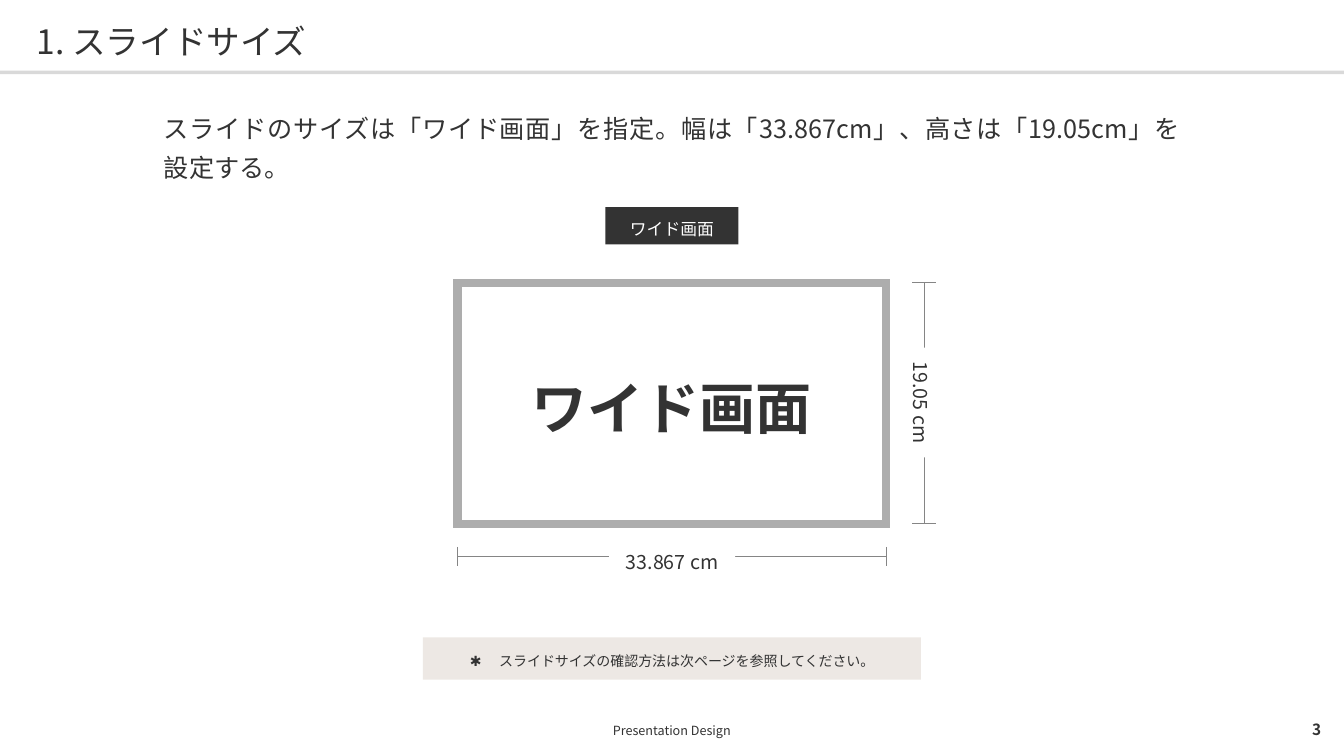
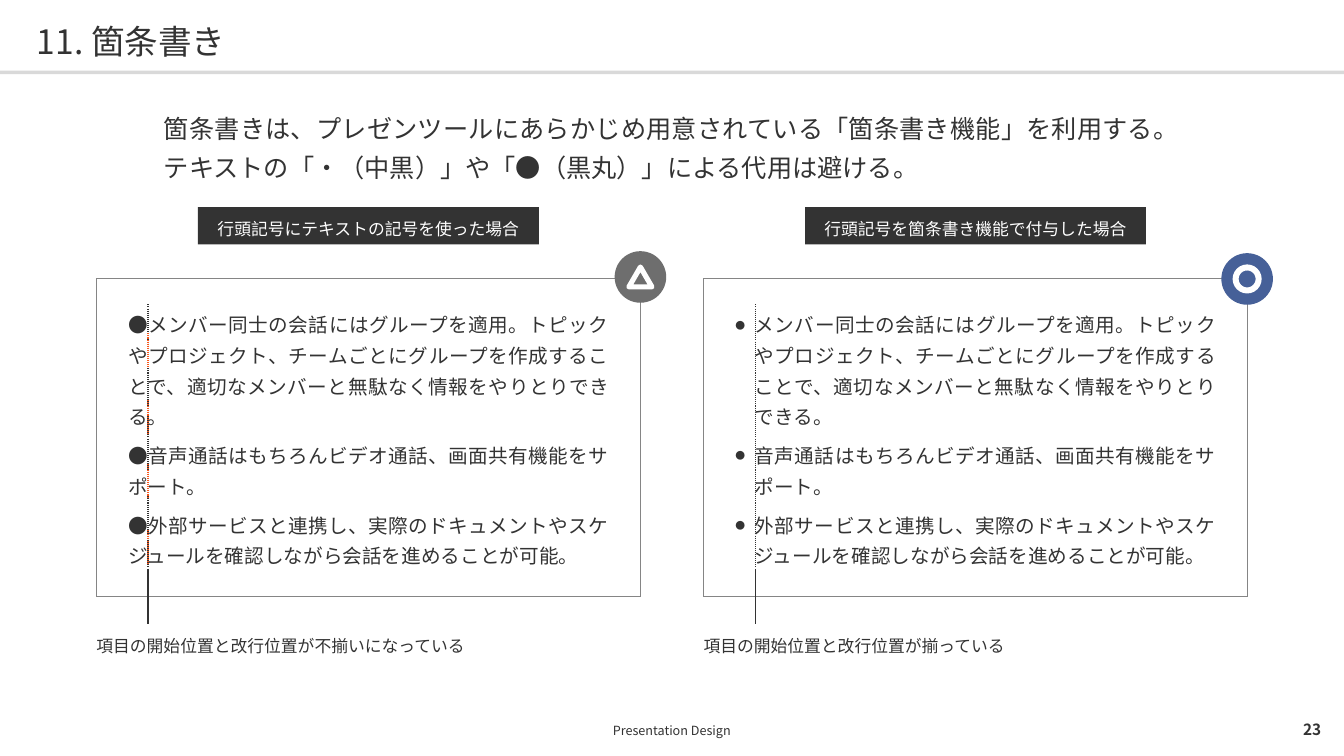
import pptx
import pptx.dml.color
import pptx.enum.dml
import pptx.enum.shapes
import pptx.enum.text
import pptx.oxml
import pptx.oxml.ns
import pptx.util
from lxml import etree

Cm = pptx.util.Cm
Pt = pptx.util.Pt
ALIGN = pptx.enum.text.PP_ALIGN
ANCHOR = pptx.enum.text.MSO_ANCHOR
SHAPE = pptx.enum.shapes.MSO_SHAPE
qn = pptx.oxml.ns.qn

FONT = "Noto Sans CJK JP"
INK = "333333"
WHITE = "FFFFFF"
RULE = "D9D9D9"
FRAME = "ADADAD"
LINE = "858585"
NOTE = "EDE8E4"
ACCENT = "F7581D"
GRAY_BADGE = "6E6E6E"
BLUE_BADGE = "466098"

SLIDE_WIDTH, SLIDE_HEIGHT = 33.87, 19.05
PANEL_WIDTH, PANEL_HEIGHT, PANEL_TOP = 13.71, 8.03, 7.01
GUIDE_OFFSET = 1.3

ITEMS = [
    "メンバー同士の会話にはグループを適用。トピックやプロジェクト、チームごとにグループを作成することで、適切なメンバーと無駄なく情報をやりとりできる。",
    "音声通話はもちろんビデオ通話、画面共有機能をサポート。",
    "外部サービスと連携し、実際のドキュメントやスケジュールを確認しながら会話を進めることが可能。",
]


def color(value):
    return pptx.dml.color.RGBColor.from_string(value)


def set_bullet(paragraph, character, indent, percent):
    properties = paragraph._p.get_or_add_pPr()
    properties.set("marL", str(Cm(indent)))
    properties.set("indent", str(-Cm(indent)))
    etree.SubElement(properties, qn("a:buSzPct")).set("val", str(percent * 1000))
    etree.SubElement(properties, qn("a:buFont")).set("typeface", FONT)
    etree.SubElement(properties, qn("a:buChar")).set("char", character)


def write(shape, texts, size, ink=INK, bold=False, align=ALIGN.LEFT, anchor=ANCHOR.TOP,
          spacing=1.0, after=0, insets=(0, 0, 0, 0), bullet=None):
    frame = shape.text_frame
    frame.word_wrap = True
    frame.auto_size = pptx.enum.text.MSO_AUTO_SIZE.NONE
    frame.vertical_anchor = anchor
    frame.margin_left, frame.margin_top, frame.margin_right, frame.margin_bottom = map(Cm, insets)
    for index, text in enumerate(texts):
        paragraph = frame.add_paragraph() if index else frame.paragraphs[0]
        if bullet:
            set_bullet(paragraph, *bullet)
        paragraph.alignment = align
        paragraph.line_spacing = spacing
        paragraph.space_before = Pt(0)
        paragraph.space_after = Pt(after)
        run = paragraph.add_run()
        run.text = text
        run.font.size = Pt(size)
        run.font.bold = bold
        run.font.color.rgb = color(ink)
        run.font.name = FONT
        etree.SubElement(run._r.get_or_add_rPr(), qn("a:ea")).set("typeface", FONT)


def add_box(slide, left, top, width, height, fill=None, line=None, weight=0.75,
            kind=SHAPE.RECTANGLE, join="miter"):
    shape = slide.shapes.add_shape(kind, Cm(left), Cm(top), Cm(width), Cm(height))
    shape.shadow.inherit = False
    if fill:
        shape.fill.solid()
        shape.fill.fore_color.rgb = color(fill)
    else:
        shape.fill.background()
    if line:
        shape.line.color.rgb = color(line)
        shape.line.width = Pt(weight)
        etree.SubElement(shape.line._get_or_add_ln(), qn("a:" + join))
    else:
        shape.line.fill.background()
    return shape


def add_text(slide, left, top, width, height, text, size, **style):
    box = slide.shapes.add_textbox(Cm(left), Cm(top), Cm(width), Cm(height))
    write(box, [text], size, **style)


def add_line(slide, start, end, ink=INK, dotted=False):
    connector = slide.shapes.add_connector(
        pptx.enum.shapes.MSO_CONNECTOR.STRAIGHT, *map(Cm, (*start, *end)))
    connector.line.color.rgb = color(ink)
    connector.line.width = Pt(0.75)
    if dotted:
        connector.line.dash_style = pptx.enum.dml.MSO_LINE.ROUND_DOT
    etree.SubElement(connector._element.spPr, qn("a:effectLst"))


def add_base(presentation, title, number, lead):
    slide = presentation.slides.add_slide(presentation.slide_layouts[5])
    add_box(slide, 0, 1.78, SLIDE_WIDTH, 0.09, fill=RULE)
    heading = slide.shapes.title
    heading.left, heading.top, heading.width, heading.height = map(Cm, (0.93, 0.44, 32, 1.1))
    write(heading, [title], 24, anchor=ANCHOR.MIDDLE, spacing=1.1)
    add_text(slide, 2.43, 18.03, 29, 0.74, "Presentation Design", 9,
             align=ALIGN.CENTER, anchor=ANCHOR.MIDDLE)
    add_text(slide, 32.03, 18.03, 1.27, 0.71, str(number), 11, bold=True,
             align=ALIGN.RIGHT, anchor=ANCHOR.MIDDLE)
    write(add_box(slide, 4.13, 2.62, 25.6, 1.93), [lead], 18,
          align=ALIGN.JUSTIFY, spacing=1.3)
    return slide


def add_tag(slide, center, width, text):
    tag = add_box(slide, center - width / 2, 5.22, width, 0.94, fill=INK)
    write(tag, [text], 12, ink=WHITE, align=ALIGN.CENTER, anchor=ANCHOR.MIDDLE,
          spacing=1.2, insets=(0.3, 0.2, 0.3, 0.15))


def set_borders(cell, sides):
    cell.fill.background()
    properties = cell._tc.get_or_add_tcPr()
    for index, side in enumerate("LRTB"):
        border = etree.Element(qn("a:ln" + side))
        if side in sides:
            border.set("w", str(Pt(0.75)))
            fill = etree.SubElement(border, qn("a:solidFill"))
            etree.SubElement(fill, qn("a:srgbClr")).set("val", LINE)
        else:
            etree.SubElement(border, qn("a:noFill"))
        properties.insert(index, border)


def add_bracket(slide, left, top, widths, heights, borders):
    frame = slide.shapes.add_table(len(heights), len(widths), Cm(left), Cm(top),
                                   Cm(sum(widths)), Cm(sum(heights)))
    table = frame.table
    table.first_row = table.horz_banding = False
    for column, width in zip(table.columns, widths):
        column.width = Cm(width)
    for row, height in zip(table.rows, heights):
        row.height = Cm(height)
    for cell, sides in zip(table.iter_cells(), borders):
        cell.margin_left = cell.margin_right = cell.margin_top = cell.margin_bottom = 0
        ending = etree.SubElement(cell.text_frame.paragraphs[0]._p, qn("a:endParaRPr"))
        ending.set("sz", "100")
        set_borders(cell, sides)


def add_dimension_label(slide, left, top, width, text, rotation=0):
    box = add_box(slide, left, top, width, 0.69, fill=WHITE)
    box.rotation = rotation
    write(box, [text], 14, align=ALIGN.CENTER, spacing=1.2)


def add_badge(slide, left, top, fill, mark, mark_top, mark_height, weight):
    add_box(slide, left, top, 1.3, 1.3, fill=fill, kind=SHAPE.OVAL)
    add_box(slide, left + 0.36, top + mark_top, 0.58, mark_height,
            line=WHITE, weight=weight, kind=mark, join="round")


def add_panel(slide, left, heading, items, caption, bullet=None):
    add_tag(slide, left + PANEL_WIDTH / 2, 8.59, heading)
    panel = add_box(slide, left, PANEL_TOP, PANEL_WIDTH, PANEL_HEIGHT, line=LINE)
    write(panel, items, 14, align=ALIGN.JUSTIFY, spacing=1.3, after=6,
          insets=(0.8, 0.71, 0.8, 0.71), bullet=bullet)
    guide = left + GUIDE_OFFSET
    add_line(slide, (guide, 7.67), (guide, 14.33), dotted=True)
    add_line(slide, (guide, 15.72), (guide, 14.33))
    write(add_box(slide, left, 15.93, PANEL_WIDTH, 0.58), [caption], 12,
          align=ALIGN.JUSTIFY, spacing=1.2)


def build_size_slide(presentation):
    slide = add_base(
        presentation, "1. スライドサイズ", 3,
        "スライドのサイズは「ワイド画面」を指定。幅は「33.867cm」、高さは「19.05cm」を設定する。")
    screen = add_box(slide, 11.53, 7.13, 10.8, 6.07, fill=WHITE, line=FRAME, weight=6)
    write(screen, ["ワイド画面"], 40, bold=True, align=ALIGN.CENTER,
          anchor=ANCHOR.MIDDLE, spacing=1.1)
    add_bracket(slide, 22.99, 7.12, (0.3, 0.3), (6.07,), ("TRB", "LTB"))
    add_bracket(slide, 11.53, 13.78, (10.8,), (0.24, 0.24), ("LRB", "LTR"))
    add_dimension_label(slide, 21.9, 9.8, 2.77, "19.05 cm", rotation=90)
    add_dimension_label(slide, 15.35, 13.74, 3.18, "33.867 cm")
    note = add_box(slide, 10.66, 16.06, 12.55, 1.07, fill=NOTE)
    write(note, ["スライドサイズの確認方法は次ページを参照してください。"], 10,
          align=ALIGN.CENTER, spacing=1.2, after=3,
          insets=(0.5, 0.3, 0.5, 0.25), bullet=("✱", 0.74, 100))
    add_tag(slide, SLIDE_WIDTH / 2, 3.35, "ワイド画面")


def build_bullet_slide(presentation):
    slide = add_base(
        presentation, "11. 箇条書き", 23,
        "箇条書きは、プレゼンツールにあらかじめ用意されている「箇条書き機能」を利用する。"
        "テキストの「・（中黒）」や「●（黒丸）」による代用は避ける。")
    left, right = 2.43, 17.73
    add_panel(slide, left, "行頭記号にテキストの記号を使った場合",
              ["●" + item for item in ITEMS],
              "項目の開始位置と改行位置が不揃いになっている")
    add_panel(slide, right, "行頭記号を箇条書き機能で付与した場合", ITEMS,
              "項目の開始位置と改行位置が揃っている", bullet=("●", 0.49, 50))
    guide = left + GUIDE_OFFSET
    for top in (8.4, 10.08, 11.68, 13.36):
        add_line(slide, (guide, top), (guide, top + 0.85), ACCENT, dotted=True)
    add_badge(slide, 15.49, 6.33, GRAY_BADGE, SHAPE.ISOSCELES_TRIANGLE, 0.4, 0.5, 3.68)
    add_badge(slide, 30.78, 6.38, BLUE_BADGE, SHAPE.OVAL, 0.36, 0.58, 4.29)


def main():
    presentation = pptx.Presentation()
    presentation.slide_width = Cm(SLIDE_WIDTH)
    presentation.slide_height = Cm(SLIDE_HEIGHT)
    build_size_slide(presentation)
    build_bullet_slide(presentation)
    presentation.save("out.pptx")


if __name__ == "__main__":
    main()
